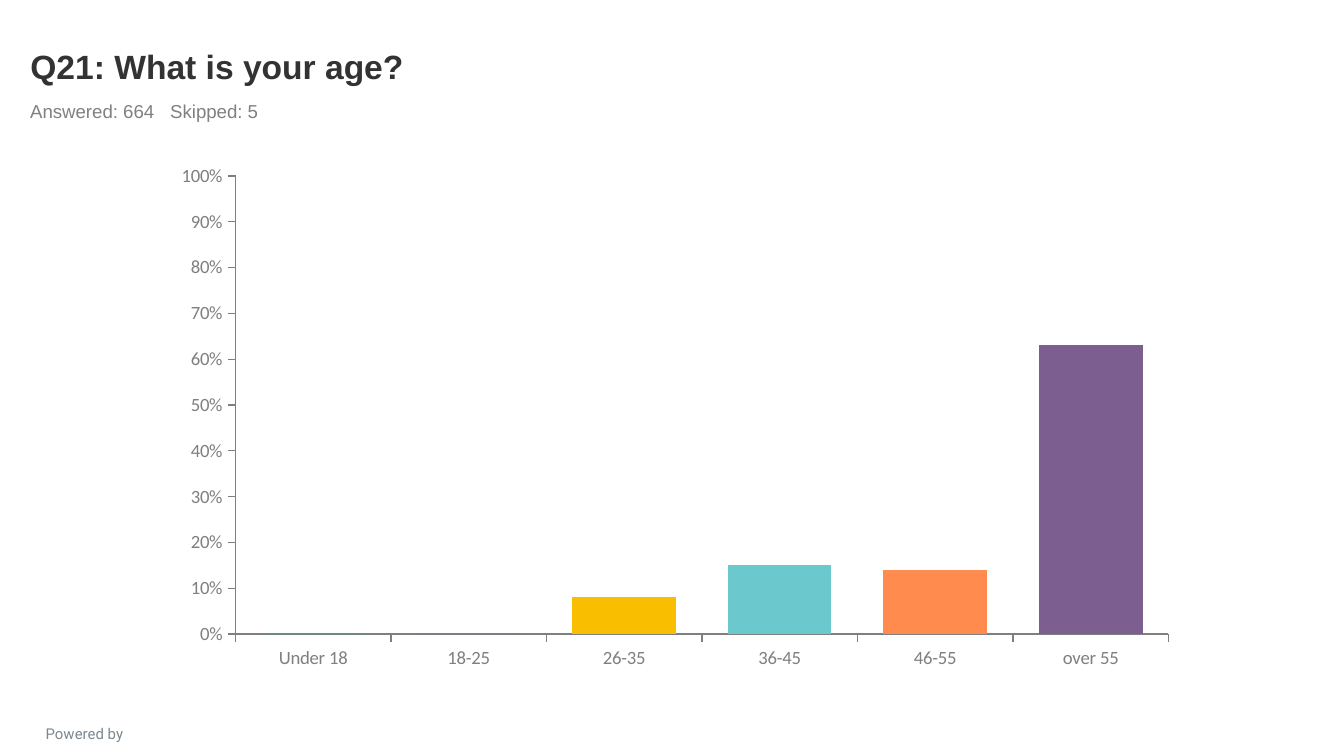
from lxml.etree import SubElement
from pptx import Presentation
from pptx.chart.data import CategoryChartData
from pptx.dml.color import RGBColor
from pptx.enum.chart import XL_CHART_TYPE, XL_TICK_LABEL_POSITION, XL_TICK_MARK
from pptx.enum.text import MSO_ANCHOR, MSO_AUTO_SIZE, PP_ALIGN
from pptx.oxml.ns import qn
from pptx.util import Emu, Pt

EMU_PER_PX = 914400 / 134.4

DARK = RGBColor(0x33, 0x33, 0x33)
GREY = RGBColor(0x80, 0x80, 0x80)
AXIS_GREY = RGBColor(0x7F, 0x7F, 0x7F)
SLATE = RGBColor(0x7C, 0x87, 0x8E)
GREEN = RGBColor(0x00, 0xBF, 0x6F)
BLUE = RGBColor(0x50, 0x7C, 0xB6)
YELLOW = RGBColor(0xF9, 0xBE, 0x00)
TEAL = RGBColor(0x6B, 0xC8, 0xCD)
ORANGE = RGBColor(0xFF, 0x8B, 0x4F)
PURPLE = RGBColor(0x7D, 0x5E, 0x90)

AGE_GROUPS = [
    ("Under 18", 0, GREEN),
    ("18-25", 0, BLUE),
    ("26-35", 0.08, YELLOW),
    ("36-45", 0.15, TEAL),
    ("46-55", 0.14, ORANGE),
    ("over 55", 0.63, PURPLE),
]


def px(length):
    return Emu(round(length * EMU_PER_PX))


def style_font(font, name, size, color, bold=False):
    font.name = name
    font.size = Pt(size)
    font.bold = bold
    font.color.rgb = color


def add_tab_stop(paragraph, position):
    tabs = SubElement(paragraph._p.get_or_add_pPr(), qn("a:tabLst"))
    SubElement(tabs, qn("a:tab"), pos=str(px(position)), algn="l")


def set_title(slide, text):
    title = slide.shapes.title
    title.left, title.top, title.width, title.height = map(px, (17, 12, 1210, 81))
    frame = title.text_frame
    frame.text = text
    frame.auto_size = MSO_AUTO_SIZE.NONE
    frame.vertical_anchor = MSO_ANCHOR.BOTTOM
    paragraph = frame.paragraphs[0]
    paragraph.alignment = PP_ALIGN.LEFT
    style_font(paragraph.font, "Arial", 18, DARK, bold=True)


def add_text(slide, bounds, text, font, size, color, align=PP_ALIGN.LEFT, tab=None):
    box = slide.shapes.add_textbox(*map(px, bounds))
    frame = box.text_frame
    frame.word_wrap = True
    paragraph = frame.paragraphs[0]
    paragraph.text = text
    paragraph.alignment = align
    if tab:
        add_tab_stop(paragraph, tab)
    style_font(paragraph.font, font, size, color)


def style_axis(axis):
    axis.has_major_gridlines = False
    axis.major_tick_mark = XL_TICK_MARK.OUTSIDE
    axis.minor_tick_mark = XL_TICK_MARK.NONE
    axis.format.line.color.rgb = AXIS_GREY
    axis.format.line.width = Pt(0.75)
    style_font(axis.tick_labels.font, "Calibri", 10, AXIS_GREY)


def add_age_chart(slide, bounds):
    names, shares, colors = zip(*AGE_GROUPS)
    data = CategoryChartData(number_format="0%")
    data.categories = names
    data.add_series("Series 1", shares)
    chart = slide.shapes.add_chart(
        XL_CHART_TYPE.COLUMN_CLUSTERED, *map(px, bounds), data
    ).chart
    chart.has_legend = False
    chart.has_title = False
    style_font(chart.font, "Calibri", 18, DARK)

    style_axis(chart.category_axis)
    chart.category_axis.tick_label_position = XL_TICK_LABEL_POSITION.LOW
    value_axis = chart.value_axis
    style_axis(value_axis)
    value_axis.minimum_scale = 0
    value_axis.maximum_scale = 1
    value_axis.major_unit = 0.1
    value_axis.tick_labels.number_format = "0%"
    value_axis.tick_labels.number_format_is_linked = False

    plot = chart.plots[0]
    plot.gap_width = 50
    plot.overlap = 100
    plot.vary_by_categories = False
    series = plot.series[0]
    series.format.fill.solid()
    series.format.fill.fore_color.rgb = GREEN
    for index, color in enumerate(colors):
        fill = series.points[index].format.fill
        fill.solid()
        fill.fore_color.rgb = color


def main():
    deck = Presentation()
    deck.slide_width, deck.slide_height = px(1344), px(756)
    slide = deck.slides.add_slide(deck.slide_layouts.get_by_name("Title Only"))
    add_text(slide, (7, 718, 155, 24), "Powered by", "Roboto", 8, SLATE, PP_ALIGN.CENTER)
    set_title(slide, "Q21: What is your age?")
    add_text(slide, (17, 93, 1210, 35), "Answered: 664\tSkipped: 5", "Arial", 10, GREY, tab=140)
    add_age_chart(slide, (161, 155, 1028, 524))
    deck.save("out.pptx")


if __name__ == "__main__":
    main()
